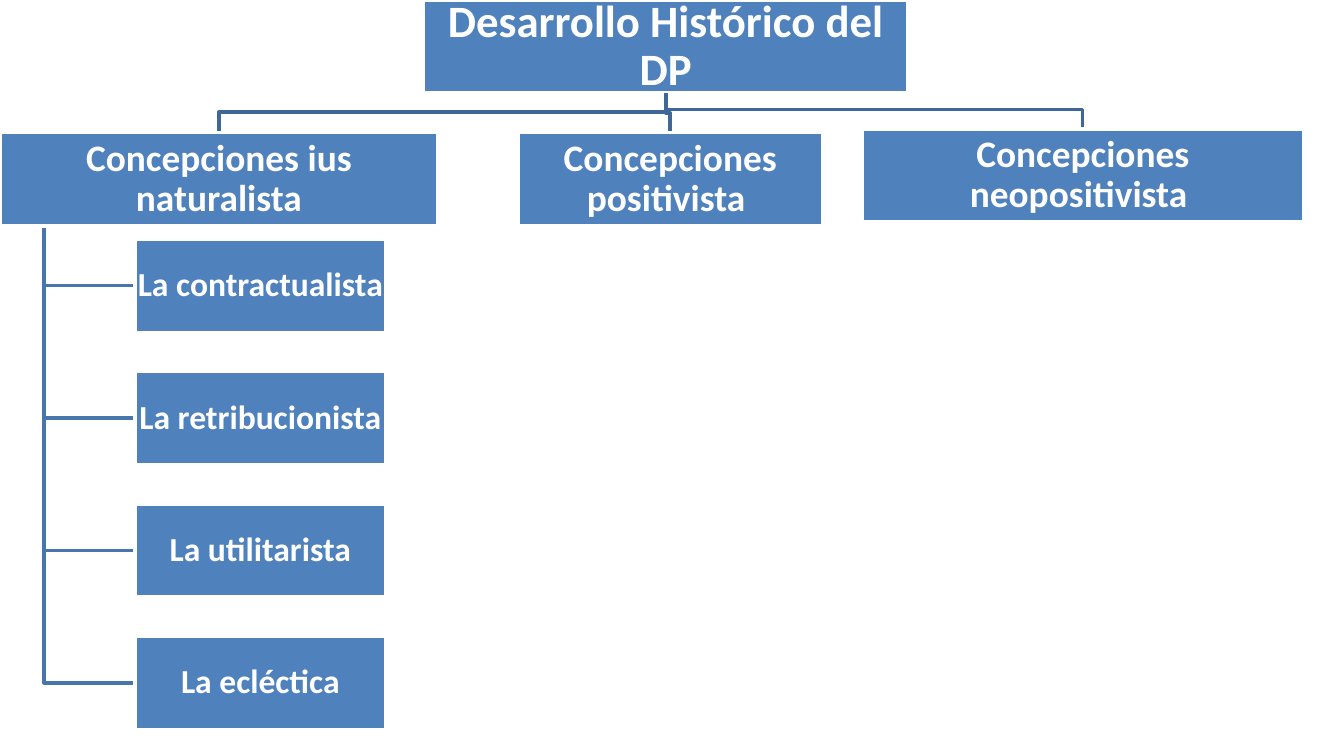
from pptx import Presentation, util as u
from pptx.dml.color import RGBColor
from pptx.enum import shapes, text

PX = 4572  # EMU per px, 200 px to the inch
BOX_H = 139


def rgb(hex_color):
    return RGBColor.from_string(hex_color)


class Chart:
    """Style of the organisation chart and the slide it is drawn on."""
    font, fill, white = "Calibri", "4F81BD", "FFFFFF"
    main_line, branch_line = "3F6797", "4875AC"
    line_width = u.Pt(2)

    def __init__(self, s):
        self.s = s

    def fill_box(self, sp, x, y, w, label, size, inset=2):
        sp.left, sp.top, sp.width, sp.height = [v * PX for v in (x, y, w, BOX_H)]
        sp.fill.solid()
        sp.fill.fore_color.rgb = rgb(self.fill)
        sp.line.color.rgb = rgb(self.white)
        sp.line.width = self.line_width
        tf = sp.text_frame
        tf.word_wrap = True
        tf.auto_size = text.MSO_AUTO_SIZE.NONE
        tf.vertical_anchor = text.MSO_ANCHOR.MIDDLE
        tf.margin_left = tf.margin_right = tf.margin_top = tf.margin_bottom = inset * PX
        p = tf.paragraphs[0]
        p.alignment = text.PP_ALIGN.CENTER
        p.line_spacing = 0.9
        r = p.add_run()
        r.text = label
        r.font.name, r.font.size, r.font.bold = self.font, u.Pt(size), True
        r.font.color.rgb = rgb(self.white)

    def title(self, x, y, w, label):
        self.fill_box(self.s.shapes.title, x, y, w, label, 24, inset=3)

    def box(self, x, y, w, label, size):
        sp = self.s.shapes.add_shape(shapes.MSO_SHAPE.RECTANGLE, 0, 0, PX, PX)
        sp.shadow.inherit = False
        self.fill_box(sp, x, y, w, label, size)

    def elbow(self, points, color):
        """Draw an open line through the points."""
        builder = self.s.shapes.build_freeform(*points[0], scale=PX)
        builder.add_line_segments(points[1:], close=False)
        sp = builder.convert_to_shape()
        sp.shadow.inherit = False
        sp.fill.background()
        sp.line.color.rgb = rgb(color)
        sp.line.width = self.line_width


def main():
    prs = Presentation()
    prs.slide_width, prs.slide_height = 2000 * PX, 1125 * PX
    chart = Chart(prs.slides.add_slide(prs.slide_layouts[5]))

    chart.title(630, 0, 721, "Desarrollo Histórico del DP")
    root_x, root_bottom = 991, 139

    concepts = [  # left, top, width, line centre, line height, label
        (1283, 192, 657, 1611, 163, "Concepciones neopositivista "),
        (771, 197, 453, 997, 168, "Concepciones positivista "),
        (0, 197, 652, 326, 167, "Concepciones ius naturalista"),
    ]
    for x, y, w, cx, bend, label in concepts:
        chart.elbow([(root_x, root_bottom), (root_x, bend), (cx, bend), (cx, y)],
                    chart.main_line)

    theories = ["La contractualista", "La retribucionista",
                "La utilitarista", "La ecléctica"]
    trunk_x, trunk_top, left, top, pitch = 66, 335, 201, 356, 197
    for i, label in enumerate(theories):
        y = top + i * pitch
        middle = y + BOX_H // 2
        chart.elbow([(trunk_x, trunk_top), (trunk_x, middle), (left, middle)],
                    chart.branch_line)
        chart.box(left, y, 373, label, 18)

    for x, y, w, cx, bend, label in concepts:
        chart.box(x, y, w, label, 20)

    prs.save("out.pptx")


if __name__ == "__main__":
    main()
